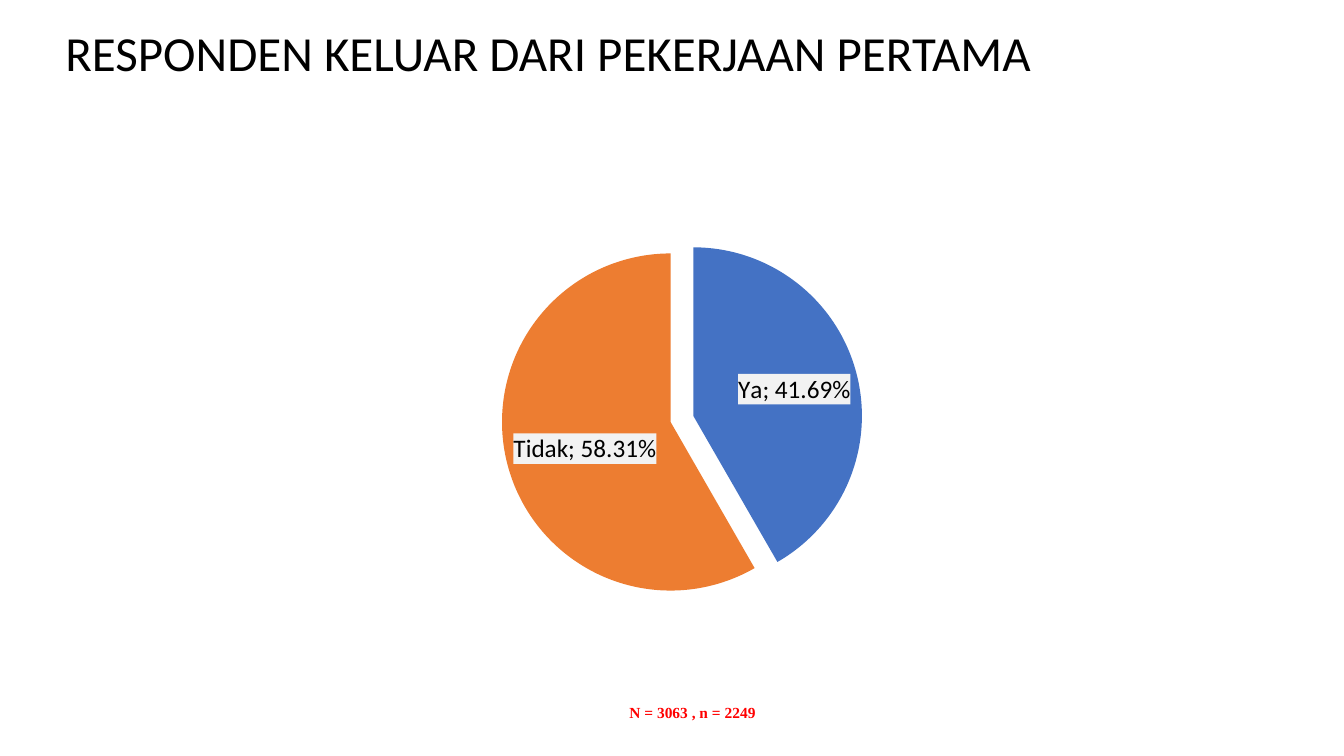
from lxml.etree import SubElement
from pptx import Presentation
from pptx.chart.data import CategoryChartData
from pptx.dml.color import RGBColor
from pptx.enum.chart import XL_CHART_TYPE, XL_LABEL_POSITION
from pptx.enum.text import MSO_ANCHOR, PP_ALIGN
from pptx.oxml import parse_xml
from pptx.oxml.ns import nsdecls, qn
from pptx.util import Pt

# Content
TITLE = "RESPONDEN KELUAR DARI PEKERJAAN PERTAMA"
SHARES = {"Ya": 0.4169, "Tidak": 0.5831}
NOTE = "N = 3063 , n = 2249"

THEME = {
    "font": "Calibri", "serif": "Times New Roman",
    "ink": "000000", "red": "FF0000", "label": "F2F2F2",
    "slices": ["4472C4", "ED7D31"],
    "title": 35, "body": 18, "small": 11, "base": 10,
}

# Layout in points
WIDE, HIGH = 960, 540
LEFT, SPAN = 39.6, 894.24
TITLE_BOX = (LEFT, 7.2, SPAN, 64.8)
CHART_BOX = (LEFT, 112.32, SPAN, 375.12)
NOTE_BOX = (437.04, 499.68, 115.2, 23.76)
PLOT = {"x": 0.031, "y": 0.094, "w": 0.939, "h": 0.809}
ROOM, GAP = 26, 7  # percent of radius: space kept, slice shift


def place(box):
    return [Pt(n) for n in box]


def style(font, size, face=THEME["font"], color=THEME["ink"], bold=False):
    font.name, font.size, font.bold = face, Pt(size), bold
    font.color.rgb = RGBColor.from_string(color)


def write(frame, text, align=PP_ALIGN.LEFT, space=1.0, **form):
    para = frame.paragraphs[0]
    para.alignment, para.line_spacing = align, space
    run = para.add_run()
    run.text = text
    style(run.font, **form)


def node(tag, val):
    return parse_xml(f'<c:{tag} {nsdecls("c")} val="{val}"/>')


def add_pie(slide):
    data = CategoryChartData(number_format="0.00%")
    data.categories = list(SHARES)
    data.add_series("Series 1", list(SHARES.values()))
    chart = slide.shapes.add_chart(
        XL_CHART_TYPE.PIE, *place(CHART_BOX), data).chart
    chart.has_title = chart.has_legend = False
    style(chart.font, THEME["base"])
    plot = chart.plots[0]
    plot.vary_by_categories = True
    series = plot.series[0]

    # Slices
    for i, color in enumerate(THEME["slices"]):
        fill = series.points[i].format.fill
        fill.solid()
        fill.fore_color.rgb = RGBColor.from_string(color)
    slices = series._element.findall(qn("c:dPt"))
    slices[0].addprevious(node("explosion", ROOM))
    for part in slices:
        part.find(qn("c:spPr")).addprevious(node("explosion", GAP))

    # Labels
    labels = series.data_labels
    labels.show_value = labels.show_category_name = True
    labels.show_percentage = labels.show_legend_key = False
    labels.number_format, labels.number_format_is_linked = "0.00%", False
    labels.position = XL_LABEL_POSITION.INSIDE_END
    style(labels.font, THEME["body"])
    root = labels._element
    root.find(qn("c:txPr")).addprevious(parse_xml(
        f'<c:spPr {nsdecls("c", "a")}><a:solidFill>'
        f'<a:srgbClr val="{THEME["label"]}"/></a:solidFill></c:spPr>'))
    root.find(qn("c:showBubbleSize")).addnext(parse_xml(
        f'<c:separator {nsdecls("c")}>; </c:separator>'))

    # Plot area
    area = chart._chartSpace.find(".//" + qn("c:plotArea"))
    for old in area.findall(qn("c:layout")):
        area.remove(old)
    frame = parse_xml(f'<c:layout {nsdecls("c")}><c:manualLayout/></c:layout>')
    rules = {"layoutTarget": "inner", "xMode": "edge", "yMode": "edge", **PLOT}
    for tag, val in rules.items():
        SubElement(frame[0], qn("c:" + tag)).set("val", str(val))
    area.insert(0, frame)


def add_note(slide):
    table = slide.shapes.add_table(1, 1, *place(NOTE_BOX)).table
    table.first_row = table.horz_banding = False
    cell = table.cell(0, 0)
    cell.fill.background()
    write(cell.text_frame, NOTE, align=PP_ALIGN.CENTER, size=THEME["small"],
          face=THEME["serif"], color=THEME["red"], bold=True)


def main():
    deck = Presentation()
    deck.slide_width, deck.slide_height = Pt(WIDE), Pt(HIGH)
    slide = deck.slides.add_slide(deck.slide_layouts[6])

    # Title
    frame = slide.shapes.add_textbox(*place(TITLE_BOX)).text_frame
    frame.word_wrap, frame.vertical_anchor = True, MSO_ANCHOR.MIDDLE
    write(frame, TITLE, space=0.9, size=THEME["title"])

    add_pie(slide)
    add_note(slide)
    deck.save("out.pptx")


if __name__ == "__main__":
    main()
